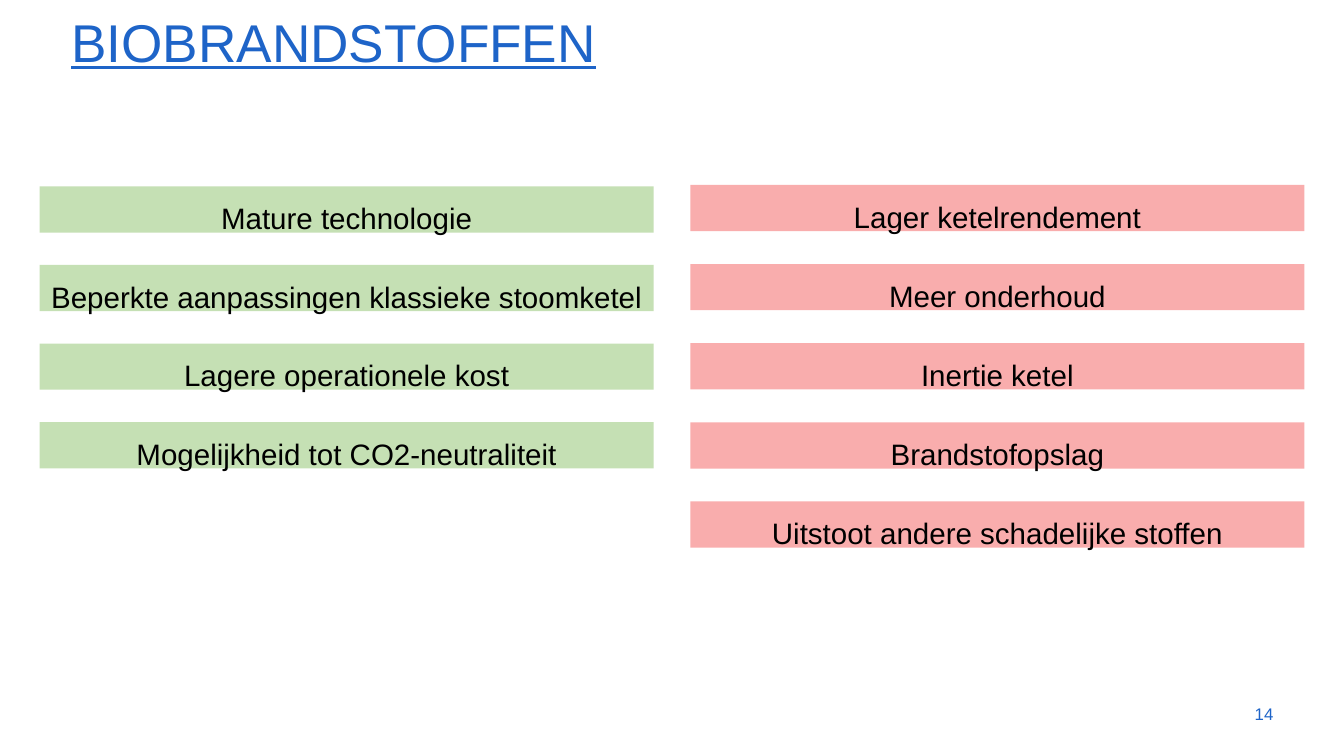
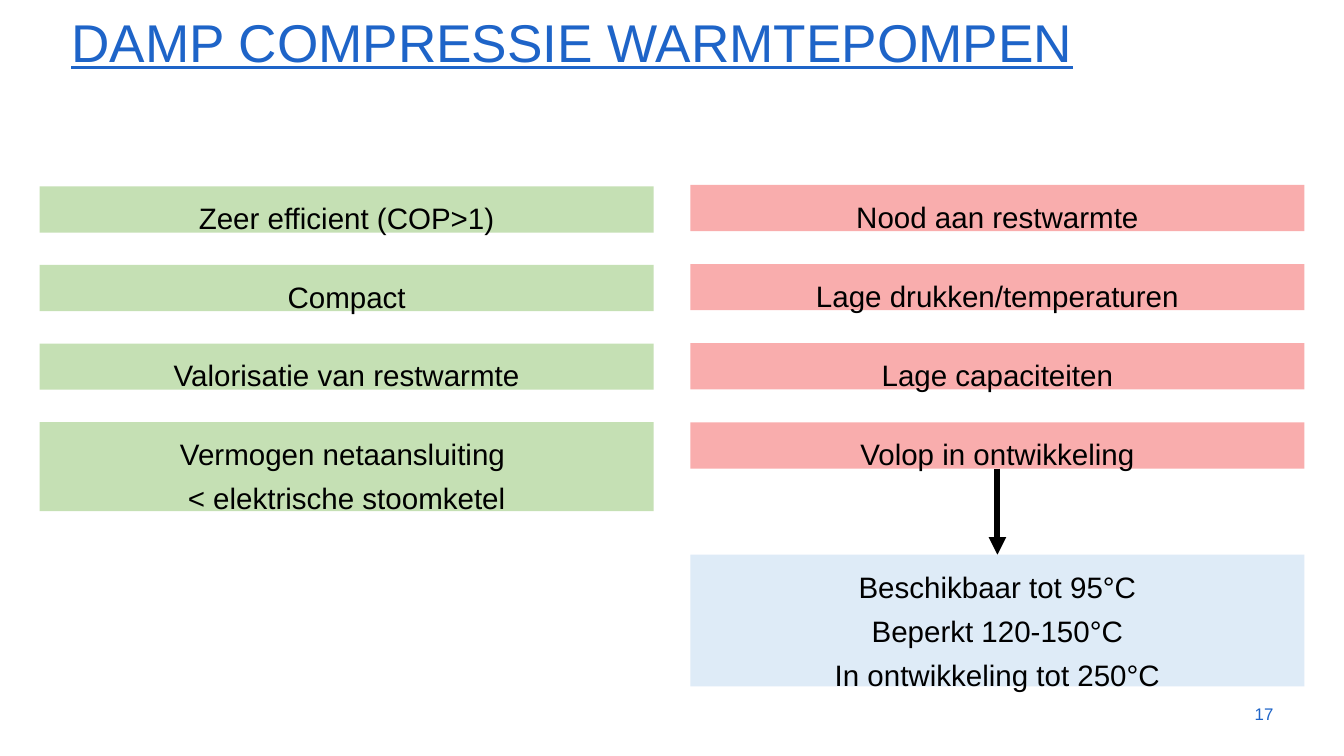
from lxml.etree import SubElement
from pptx import Presentation
from pptx.dml.color import RGBColor
from pptx.enum.shapes import MSO_CONNECTOR as Connector, MSO_SHAPE as Shape
from pptx.enum.text import MSO_ANCHOR as Anchor, PP_ALIGN as Align
from pptx.oxml.ns import qn
from pptx.util import Inches, Pt

COLOURS = {
    "title": "1E64C8",
    "text": "000000",
    "pro": "C5E0B4",
    "con": "F9ADAD",
    "note": "DEEBF7",
}

# Lengths are percent of the slide's width (left, width) or height (top, height)
WIDTH, HEIGHT = Inches(18.96), Inches(10.67)
TITLE_AREA = (4.8, 1.4, 90.6, 8.8)
NUMBER_AREA = (89.93, 91.75, 5.33, 5.34)
PANEL_WIDTH = 45.68
PANEL_PADDING, LINE_HEIGHT = 0.45, 5.66
# Left edge, first row and distance between rows
COLUMNS = {"pro": (2.95, 24.65, 10.4), "con": (51.37, 24.46, 10.47)}
NOTE_TOP = 73.38

SLIDES = [
    {
        "title": "BIOBRANDSTOFFEN",
        "number": "14",
        "pro": [
            ["Mature technologie"],
            ["Beperkte aanpassingen klassieke stoomketel"],
            ["Lagere operationele kost"],
            ["Mogelijkheid tot CO2-neutraliteit"],
        ],
        "con": [
            ["Lager ketelrendement"],
            ["Meer onderhoud"],
            ["Inertie ketel"],
            ["Brandstofopslag"],
            ["Uitstoot andere schadelijke stoffen"],
        ],
    },
    {
        "title": "DAMP COMPRESSIE WARMTEPOMPEN",
        "number": "17",
        "pro": [
            ["Zeer efficient (COP>1)"],
            ["Compact"],
            ["Valorisatie van restwarmte"],
            ["Vermogen netaansluiting ", "< elektrische stoomketel"],
        ],
        "con": [
            ["Nood aan restwarmte"],
            ["Lage drukken/temperaturen"],
            ["Lage capaciteiten"],
            ["Volop in ontwikkeling"],
        ],
        "note": [
            "Beschikbaar tot 95°C",
            "Beperkt 120-150°C",
            "In ontwikkeling tot 250°C",
        ],
    },
]


def colour(name):
    return RGBColor.from_string(COLOURS[name])


def across(share):
    return round(WIDTH * share / 100)


def down(share):
    return round(HEIGHT * share / 100)


def area(left, top, width, height):
    return across(left), down(top), across(width), down(height)


def panel_height(lines):
    return PANEL_PADDING + LINE_HEIGHT * len(lines)


class SlideBuilder:
    FONTS = {
        "title": {"name": "Arial", "size": Pt(54), "underline": True},
        "number": {"name": "Arial", "size": Pt(17.1)},
        "panel": {"name": "Arial", "size": Pt(30)},
    }
    PARAGRAPHS = {
        "title": {"alignment": Align.LEFT, "line_spacing": 0.9},
        "number": {"alignment": Align.RIGHT},
        "panel": {"alignment": Align.CENTER, "line_spacing": 1.25},
    }
    FRAMES = {
        "title": {"word_wrap": True, "vertical_anchor": Anchor.BOTTOM},
        "number": {"word_wrap": True, "vertical_anchor": Anchor.MIDDLE},
        "panel": {
            "word_wrap": True,
            "vertical_anchor": Anchor.TOP,
            "margin_top": Inches(0.07),
            "margin_bottom": 0,
        },
    }

    def __init__(self):
        self.deck = Presentation()
        self.deck.slide_width, self.deck.slide_height = WIDTH, HEIGHT
        self.page = None

    def new_page(self):
        self.page = self.deck.slides.add_slide(self.deck.slide_layouts[6])

    def fill_text(self, box, lines, style, ink):
        frame = box.text_frame
        for key, value in self.FRAMES[style].items():
            setattr(frame, key, value)
        for index, line in enumerate(lines):
            para = frame.add_paragraph() if index else frame.paragraphs[0]
            for key, value in self.PARAGRAPHS[style].items():
                setattr(para, key, value)
            span = para.add_run()
            span.text = line
            for key, value in self.FONTS[style].items():
                setattr(span.font, key, value)
            span.font.color.rgb = colour(ink)

    def label(self, text, place, style):
        box = self.page.shapes.add_textbox(*area(*place))
        self.fill_text(box, [text], style, "title")

    def panel(self, lines, left, top, fill):
        place = area(left, top, PANEL_WIDTH, panel_height(lines))
        box = self.page.shapes.add_shape(Shape.RECTANGLE, *place)
        box.shadow.inherit = False
        box.fill.solid()
        box.fill.fore_color.rgb = colour(fill)
        box.line.fill.background()
        self.fill_text(box, lines, "panel", "text")

    def column(self, panels, kind):
        """Stack panels and return the bottom of the last one."""
        left, first, pitch = COLUMNS[kind]
        for row, lines in enumerate(panels):
            self.panel(lines, left, first + row * pitch, kind)
        return first + (len(panels) - 1) * pitch + panel_height(panels[-1])

    def down_arrow(self, middle, start, end):
        arrow = self.page.shapes.add_connector(
            Connector.STRAIGHT, across(middle), down(start), across(middle), down(end)
        )
        arrow.line.color.rgb = colour("text")
        arrow.line.width = Pt(6)
        properties = arrow.element.spPr
        SubElement(properties.find(qn("a:ln")), qn("a:tailEnd"), type="triangle")
        SubElement(properties, qn("a:effectLst"))


def main():
    builder = SlideBuilder()
    for content in SLIDES:
        builder.new_page()
        # Title and page number
        builder.label(content["title"], TITLE_AREA, "title")
        builder.label(content["number"], NUMBER_AREA, "number")
        # Advantages on the left, drawbacks on the right
        builder.column(content["pro"], "pro")
        bottom = builder.column(content["con"], "con")
        # Explanation of the last drawback
        if "note" in content:
            left = COLUMNS["con"][0]
            builder.down_arrow(left + PANEL_WIDTH / 2, bottom, NOTE_TOP)
            builder.panel(content["note"], left, NOTE_TOP, "note")
    builder.deck.save("out.pptx")


if __name__ == "__main__":
    main()
